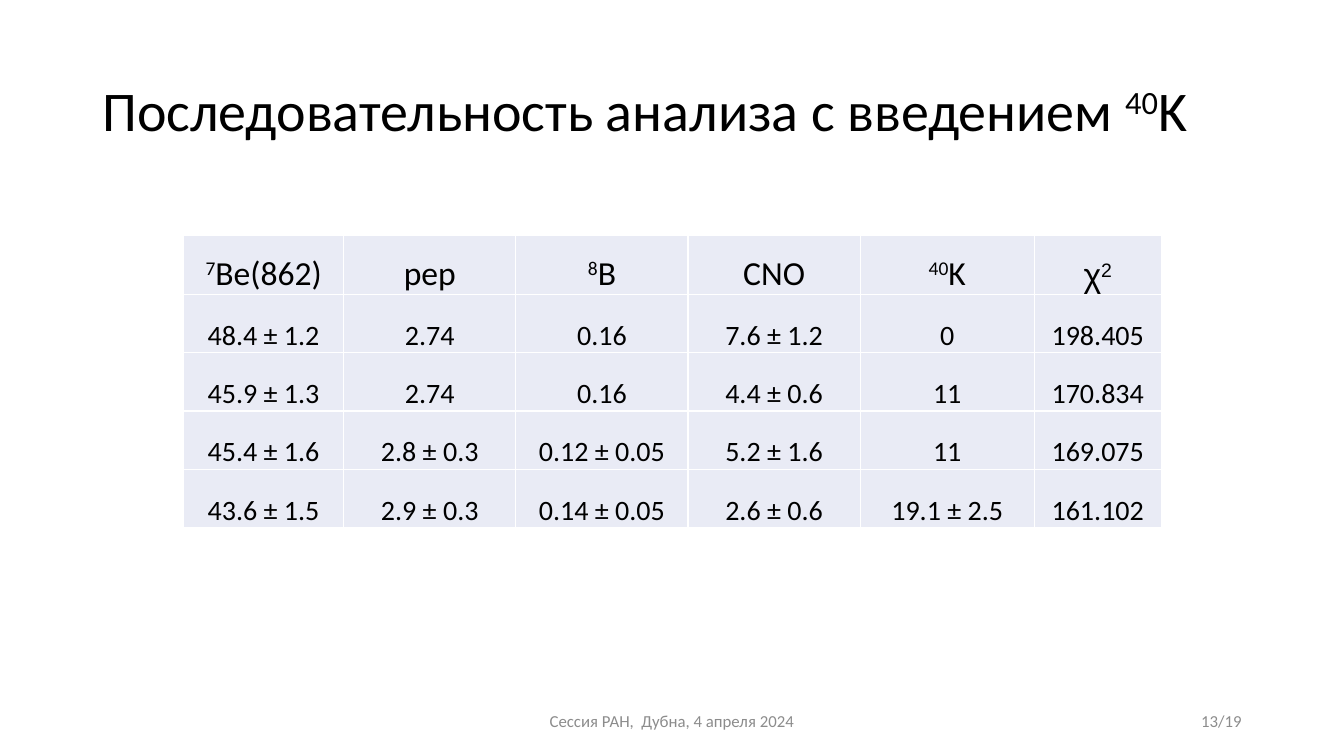
from dataclasses import dataclass
from typing import NamedTuple

from lxml.etree import SubElement
from pptx import Presentation
from pptx.dml.color import RGBColor
from pptx.enum.text import MSO_ANCHOR, MSO_AUTO_SIZE, PP_ALIGN
from pptx.oxml.ns import qn
from pptx.util import Pt


@dataclass(frozen=True)
class Theme:
    ink: str = "000000"
    muted: str = "8C8C8C"
    cell: str = "E9EBF5"
    border: str = "FFFFFF"
    font: str = "Calibri"
    greek_font: str = "Arial"
    title_size: int = 40
    header_size: int = 24
    value_size: int = 20
    footer_size: int = 12


class Box(NamedTuple):
    left: float
    top: float
    width: float
    height: float

    def in_points(self):
        return [Pt(length) for length in self]


class Piece(NamedTuple):
    text: str
    raised: bool = False
    font: str = Theme.font


THEME = Theme()

TITLE = [Piece("Последовательность анализа с введением "), Piece("40", True), Piece("K")]
HEADERS = [
    [Piece("7", True), Piece("Be(862)")],
    [Piece("pep")],
    [Piece("8", True), Piece("B")],
    [Piece("CNO")],
    [Piece("40", True), Piece("K")],
    [Piece("χ", font=THEME.greek_font), Piece("2", True, THEME.greek_font)],
]
FIT_RESULTS = [
    ["48.4 ± 1.2", "2.74", "0.16", "7.6 ± 1.2", "0", "198.405"],
    ["45.9 ± 1.3", "2.74", "0.16", "4.4 ± 0.6", "11", "170.834"],
    ["45.4 ± 1.6", "2.8 ± 0.3", "0.12 ± 0.05", "5.2 ± 1.6", "11", "169.075"],
    ["43.6 ± 1.5", "2.9 ± 0.3", "0.14 ± 0.05", "2.6 ± 0.6", "19.1 ± 2.5", "161.102"],
]
COLUMN_SHARES = [1.59, 1.71, 1.71, 1.71, 1.73, 1.26]


def write(paragraph, pieces, size, color, align):
    paragraph.alignment = align
    for piece in pieces:
        run = paragraph.add_run()
        run.text = piece.text
        run.font.name = piece.font
        run.font.size = Pt(size)
        run.font.color.rgb = RGBColor.from_string(color)
        if piece.raised:
            run.font._element.set("baseline", "30000")


def add_title(slide, box):
    title = slide.shapes.title
    title.left, title.top, title.width, title.height = box.in_points()
    frame = title.text_frame
    frame.auto_size = MSO_AUTO_SIZE.NONE
    frame.vertical_anchor = MSO_ANCHOR.MIDDLE
    heading = frame.paragraphs[0]
    heading.line_spacing = 0.9
    write(heading, TITLE, THEME.title_size, THEME.ink, PP_ALIGN.LEFT)


def draw_borders(cell):
    properties = cell._tc.get_or_add_tcPr()
    for position, side in enumerate(("a:lnL", "a:lnR", "a:lnT", "a:lnB")):
        line = SubElement(properties, qn(side), w=str(Pt(1)))
        fill = SubElement(line, qn("a:solidFill"))
        SubElement(fill, qn("a:srgbClr"), val=THEME.border)
        properties.insert(position, line)  # borders precede the fill


def fill_cell(cell, pieces, size):
    cell.fill.solid()
    cell.fill.fore_color.rgb = RGBColor.from_string(THEME.cell)
    cell.vertical_anchor = MSO_ANCHOR.BOTTOM
    cell.margin_left = cell.margin_right = cell.margin_top = Pt(0.7)
    cell.margin_bottom = Pt(0)
    write(cell.text_frame.paragraphs[0], pieces, size, THEME.ink, PP_ALIGN.CENTER)
    draw_borders(cell)


def add_results_table(slide, box):
    rows = [HEADERS] + [[[Piece(value)] for value in result] for result in FIT_RESULTS]
    table = slide.shapes.add_table(len(rows), len(HEADERS), *box.in_points()).table
    table.horz_banding = False
    for column, share in zip(table.columns, COLUMN_SHARES):
        column.width = Pt(box.width * share / sum(COLUMN_SHARES))
    for row_index, row in enumerate(rows):
        table.rows[row_index].height = Pt(box.height / len(rows))
        size = THEME.value_size if row_index else THEME.header_size
        for column_index, pieces in enumerate(row):
            fill_cell(table.cell(row_index, column_index), pieces, size)


def add_footer_note(slide, box, text, align):
    frame = slide.shapes.add_textbox(*box.in_points()).text_frame
    frame.word_wrap = True
    frame.vertical_anchor = MSO_ANCHOR.MIDDLE
    write(frame.paragraphs[0], [Piece(text)], THEME.footer_size, THEME.muted, align)


def add_footer(slide, box):
    """Centre the venue on the slide and set the page number at the right end."""
    venue_width, number_width = 324, 216
    venue = box._replace(left=box.left + (box.width - venue_width) / 2, width=venue_width)
    number = box._replace(left=box.left + box.width - number_width, width=number_width)
    add_footer_note(slide, venue, "Сессия РАН,  Дубна, 4 апреля 2024", PP_ALIGN.CENTER)
    add_footer_note(slide, number, "13/19", PP_ALIGN.RIGHT)


def main():
    presentation = Presentation()
    presentation.slide_width, presentation.slide_height = Pt(960), Pt(540)
    slide = presentation.slides.add_slide(presentation.slide_layouts[5])
    add_title(slide, Box(66, 28.75, 828, 104.4))
    add_results_table(slide, Box(131.2, 168.5, 698.4, 208.5))
    add_footer(slide, Box(66, 500.5, 828, 28.75))
    presentation.save("out.pptx")


if __name__ == "__main__":
    main()
